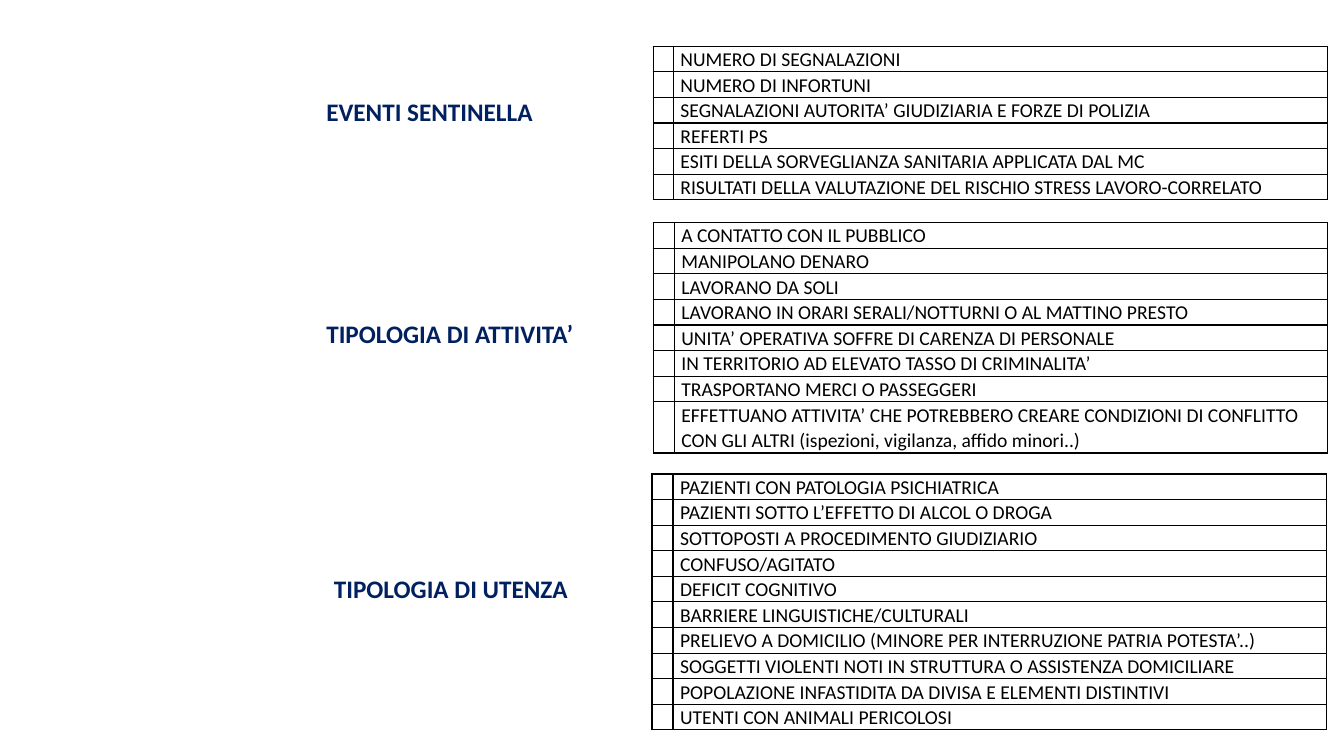
from lxml.etree import SubElement
from pptx import Presentation
from pptx.dml.color import RGBColor
from pptx.oxml.ns import qn
from pptx.util import Pt

BLACK = RGBColor(0x00, 0x00, 0x00)
NAVY = RGBColor(0x00, 0x20, 0x60)
FONT = "Calibri"
LINE_SPACING = 1.07
ROW_HEIGHT = 18.3
TABLE_WIDTH = 481.7
CELL_INSET = 5

# "label" is (left, top, width); "table" is (left, top, tick column width)
SECTIONS = [
    {
        "heading": "EVENTI SENTINELLA",
        "label": (226, 64, 208),
        "table": (466.6, 33, 14.4),
        "items": [
            "NUMERO DI SEGNALAZIONI",
            "NUMERO DI INFORTUNI",
            "SEGNALAZIONI AUTORITA’ GIUDIZIARIA E FORZE DI POLIZIA",
            "REFERTI PS",
            "ESITI DELLA SORVEGLIANZA SANITARIA APPLICATA DAL MC",
            "RISULTATI DELLA VALUTAZIONE DEL RISCHIO STRESS LAVORO-CORRELATO",
        ],
    },
    {
        "heading": "TIPOLOGIA DI ATTIVITA’",
        "label": (226, 222.5, 480),
        "table": (466.6, 159, 15.1),
        "items": [
            "A CONTATTO CON IL PUBBLICO",
            "MANIPOLANO DENARO",
            "LAVORANO DA SOLI",
            "LAVORANO IN ORARI SERALI/NOTTURNI O AL MATTINO PRESTO",
            "UNITA’ OPERATIVA SOFFRE DI CARENZA DI PERSONALE",
            "IN TERRITORIO AD ELEVATO TASSO DI CRIMINALITA’",
            "TRASPORTANO MERCI O PASSEGGERI",
            "EFFETTUANO ATTIVITA’ CHE POTREBBERO CREARE CONDIZIONI DI CONFLITTO "
            "CON GLI ALTRI (ispezioni, vigilanza, affido minori..)",
        ],
    },
    {
        "heading": "TIPOLOGIA DI UTENZA",
        "label": (231.4, 404.5, 212),
        "table": (465.7, 338.5, 15.1),
        "items": [
            "PAZIENTI CON PATOLOGIA PSICHIATRICA",
            "PAZIENTI SOTTO L’EFFETTO DI ALCOL O DROGA",
            "SOTTOPOSTI A PROCEDIMENTO GIUDIZIARIO",
            "CONFUSO/AGITATO",
            "DEFICIT COGNITIVO",
            "BARRIERE LINGUISTICHE/CULTURALI",
            "PRELIEVO A DOMICILIO (MINORE PER INTERRUZIONE PATRIA POTESTA’..)",
            "SOGGETTI VIOLENTI NOTI IN STRUTTURA O ASSISTENZA DOMICILIARE",
            "POPOLAZIONE INFASTIDITA DA DIVISA E ELEMENTI DISTINTIVI",
            "UTENTI CON ANIMALI PERICOLOSI",
        ],
    },
]


def write(para, text, size, color, bold=False):
    para.line_spacing = LINE_SPACING
    span = para.add_run()
    span.text = text
    span.font.name = FONT
    span.font.size = Pt(size)
    span.font.bold = bold
    span.font.color.rgb = color


def format_cell(cell):
    """Give a cell thin black borders, no fill and tight margins."""
    cell.margin_left = cell.margin_right = Pt(CELL_INSET)
    cell.margin_top = cell.margin_bottom = 0
    properties = cell._tc.get_or_add_tcPr()
    for side in ("a:lnL", "a:lnR", "a:lnT", "a:lnB"):
        line = SubElement(properties, qn(side), w=str(Pt(1)))
        fill = SubElement(line, qn("a:solidFill"))
        SubElement(fill, qn("a:srgbClr"), val=str(BLACK))
    cell.fill.background()


def add_heading(page, text, left, top, width):
    box = page.shapes.add_textbox(Pt(left), Pt(top), Pt(width), Pt(29.5))
    box.text_frame.word_wrap = True
    write(box.text_frame.paragraphs[0], text, 18, NAVY, bold=True)


def add_checklist(page, items, left, top, tick_width):
    # Only an item longer than the column needs a second line.
    heights = [ROW_HEIGHT * (2 if len(item) > 80 else 1) for item in items]
    frame = page.shapes.add_table(len(items), 2, Pt(left), Pt(top),
                                  Pt(TABLE_WIDTH), Pt(sum(heights)))
    table = frame.table
    table.first_row = table.horz_banding = False
    table.columns[0].width = Pt(tick_width)
    table.columns[1].width = Pt(TABLE_WIDTH - tick_width)
    for index, (item, height) in enumerate(zip(items, heights)):
        table.rows[index].height = Pt(height)
        tick, label = table.cell(index, 0), table.cell(index, 1)
        format_cell(tick)
        format_cell(label)
        SubElement(tick.text_frame.paragraphs[0]._p, qn("a:endParaRPr"), sz="1000")
        write(label.text_frame.paragraphs[0], item, 14, BLACK)


def main():
    deck = Presentation()
    deck.slide_width, deck.slide_height = Pt(960), Pt(540)
    page = deck.slides.add_slide(deck.slide_layouts[6])
    for section in SECTIONS:
        add_checklist(page, section["items"], *section["table"])
    for section in SECTIONS:
        add_heading(page, section["heading"], *section["label"])
    deck.save("out.pptx")


if __name__ == "__main__":
    main()
